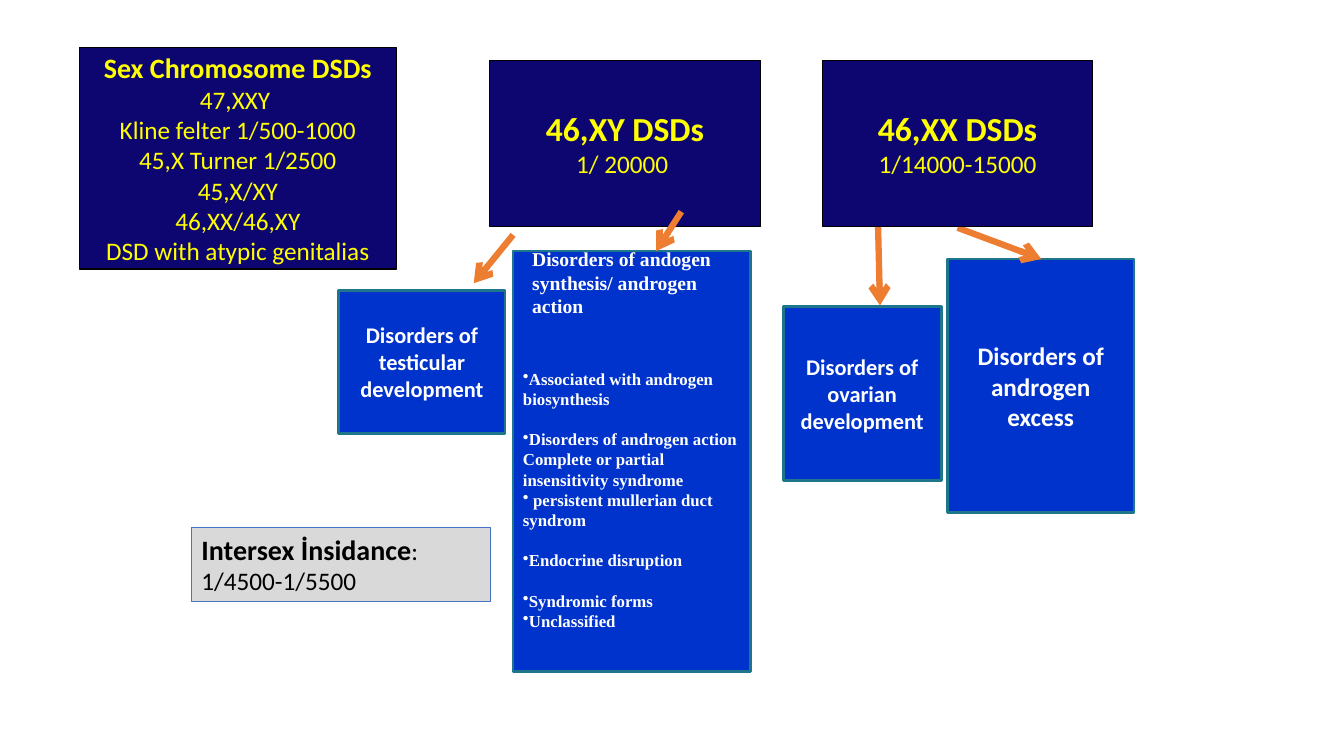
from pptx import Presentation
from pptx.dml.color import RGBColor
from pptx.enum.shapes import MSO_CONNECTOR, MSO_SHAPE
from pptx.enum.text import MSO_ANCHOR, PP_ALIGN
from pptx.oxml.ns import qn
from pptx.util import Pt
from lxml import etree

RECTANGLE = MSO_SHAPE.RECTANGLE
STRAIGHT = MSO_CONNECTOR.STRAIGHT
TOP, MIDDLE = MSO_ANCHOR.TOP, MSO_ANCHOR.MIDDLE
LEFT, CENTER = PP_ALIGN.LEFT, PP_ALIGN.CENTER

THEME = {
    "navy": RGBColor(0x0E, 0x06, 0x70),
    "blue": RGBColor(0x00, 0x33, 0xCC),
    "teal": RGBColor(0x1E, 0x76, 0x8C),
    "grey": RGBColor(0xD9, 0xD9, 0xD9),
    "edge": RGBColor(0x44, 0x72, 0xC4),
    "orange": RGBColor(0xED, 0x7D, 0x31),
    "yellow": RGBColor(0xFF, 0xFF, 0x00),
    "white": RGBColor(0xFF, 0xFF, 0xFF),
    "black": RGBColor(0x00, 0x00, 0x00),
    "sans": "Calibri",
    "serif": "Times New Roman",
    "group": 24, "heading": 20, "body": 18,
    "cause": 16, "list_title": 14, "list": 12,
}
SERIF_LEADING = 1.2

presentation = Presentation()
presentation.slide_width, presentation.slide_height = Pt(960), Pt(540)
slide = presentation.slides.add_slide(presentation.slide_layouts[6])


def add_box(bounds, fill, line, line_width, anchor=MIDDLE, wrap=True):
    shape = slide.shapes.add_shape(RECTANGLE, *map(Pt, bounds))
    shape.shadow.inherit = False
    shape.fill.solid()
    shape.fill.fore_color.rgb = THEME[fill]
    shape.line.color.rgb = THEME[line]
    shape.line.width = Pt(line_width)
    shape.text_frame.vertical_anchor = anchor
    shape.text_frame.word_wrap = wrap
    return shape.text_frame


def write(text_frame, lines, color, font="sans", align=CENTER):
    """Write (text, size, bold) lines and return their paragraphs."""
    for index, (text, size, bold) in enumerate(lines):
        paragraph = text_frame.add_paragraph() if index else text_frame.paragraphs[0]
        paragraph.text = text
        paragraph.alignment = align
        paragraph.font.name = THEME[font]
        paragraph.font.size = Pt(THEME[size])
        paragraph.font.bold = bold
        paragraph.font.color.rgb = THEME[color]
        if font == "serif":
            paragraph.line_spacing = Pt(THEME[size] * SERIF_LEADING)
    return text_frame.paragraphs


# Causes under each group
causes = [
    ((242, 207.4, 118.8, 102.2), "cause", ["Disorders of testicular", "development"]),
    ((559.4, 218.9, 113, 124.6), "cause", ["Disorders of ovarian", "development"]),
    ((676.8, 185, 133.2, 181.4), "body", ["Disorders of androgen excess"]),
]
for bounds, size, texts in causes:
    text_frame = add_box(bounds, "blue", "teal", 2)
    write(text_frame, [(text, size, True) for text in texts], "white")

# Androgen list: text, bulleted, gap above
androgen_items = [
    ("Associated with androgen biosynthesis", True, False),
    ("Disorders of androgen action", True, True),
    ("Complete or partial insensitivity syndrome", False, False),
    (" persistent mullerian duct syndrom", True, False),
    ("Endocrine disruption", True, True),
    ("Syndromic forms", True, True),
    ("Unclassified", True, False),
]
text_frame = add_box((366.5, 179.3, 169.9, 300.2), "blue", "teal", 2, TOP)
text_frame.margin_top = Pt(84)
paragraphs = write(text_frame, [(text, "list", True) for text, _, _ in androgen_items],
                   "white", "serif", LEFT)
for paragraph, (_, bulleted, gap) in zip(paragraphs, androgen_items):
    if gap:
        paragraph.space_before = Pt(THEME["list"] * SERIF_LEADING)
    if bulleted:
        properties = paragraph._p.get_or_add_pPr()
        bullet = etree.Element(qn("a:buChar"), char="•")
        properties.insert_element_before(bullet, "a:tabLst", "a:defRPr", "a:extLst")

# Androgen list title
title = slide.shapes.add_textbox(Pt(373), Pt(172.8), Pt(152.6), Pt(58.3))
title.text_frame.word_wrap = True
write(title.text_frame,
      [("Disorders of andogen synthesis/ androgen action", "list_title", True)],
      "white", "serif", LEFT)

# Arrows from groups to causes; the first three run behind the group boxes
arrows = [
    (366.5, 167.8, 338.4, 202.3),
    (627.1, 157, 628.6, 218.2),
    (684, 162.7, 743.8, 185),
    (486.7, 151.2, 468.7, 179.3),
]
connectors = []
for ends in arrows:
    connector = slide.shapes.add_connector(STRAIGHT, *map(Pt, ends))
    connector.line.color.rgb = THEME["orange"]
    connector.line.width = Pt(4.5)
    etree.SubElement(connector.line._get_or_add_ln(), qn("a:tailEnd"), type="arrow")
    etree.SubElement(connector._element.spPr, qn("a:effectLst"))
    connectors.append(connector)

# Group boxes
groups = [
    ((349.9, 43.2, 193, 118.8),
     [("46,XY DSDs", "group", True), ("1/ 20000 ", "body", False)]),
    ((587.5, 43.2, 193, 118.8),
     [("46,XX DSDs", "group", True), ("1/14000-15000", "body", False)]),
    ((56.9, 33.8, 226.1, 158.4),
     [("Sex Chromosome DSDs", "heading", True)]
     + [(text, "body", False) for text in (
         "47,XXY ", "Kline felter 1/500-1000", "45,X Turner 1/2500",
         "45,X/XY", "46,XX/46,XY", "DSD with atypic genitalias")]),
]
for bounds, lines in groups:
    write(add_box(bounds, "navy", "black", 0.75, wrap=False), lines, "yellow")

# The last arrow starts on top of its group box
slide.shapes._spTree.append(connectors[-1]._element)

# Incidence note
text_frame = add_box((136.8, 376.6, 213.8, 53.3), "grey", "edge", 0.75, TOP)
paragraph = write(text_frame, [("Intersex İnsidance", "heading", True)],
                  "black", align=LEFT)[0]
rate = paragraph.add_run()
rate.text = ": 1/4500-1/5500"
rate.font.size = Pt(THEME["body"])
rate.font.bold = False

presentation.save("out.pptx")
